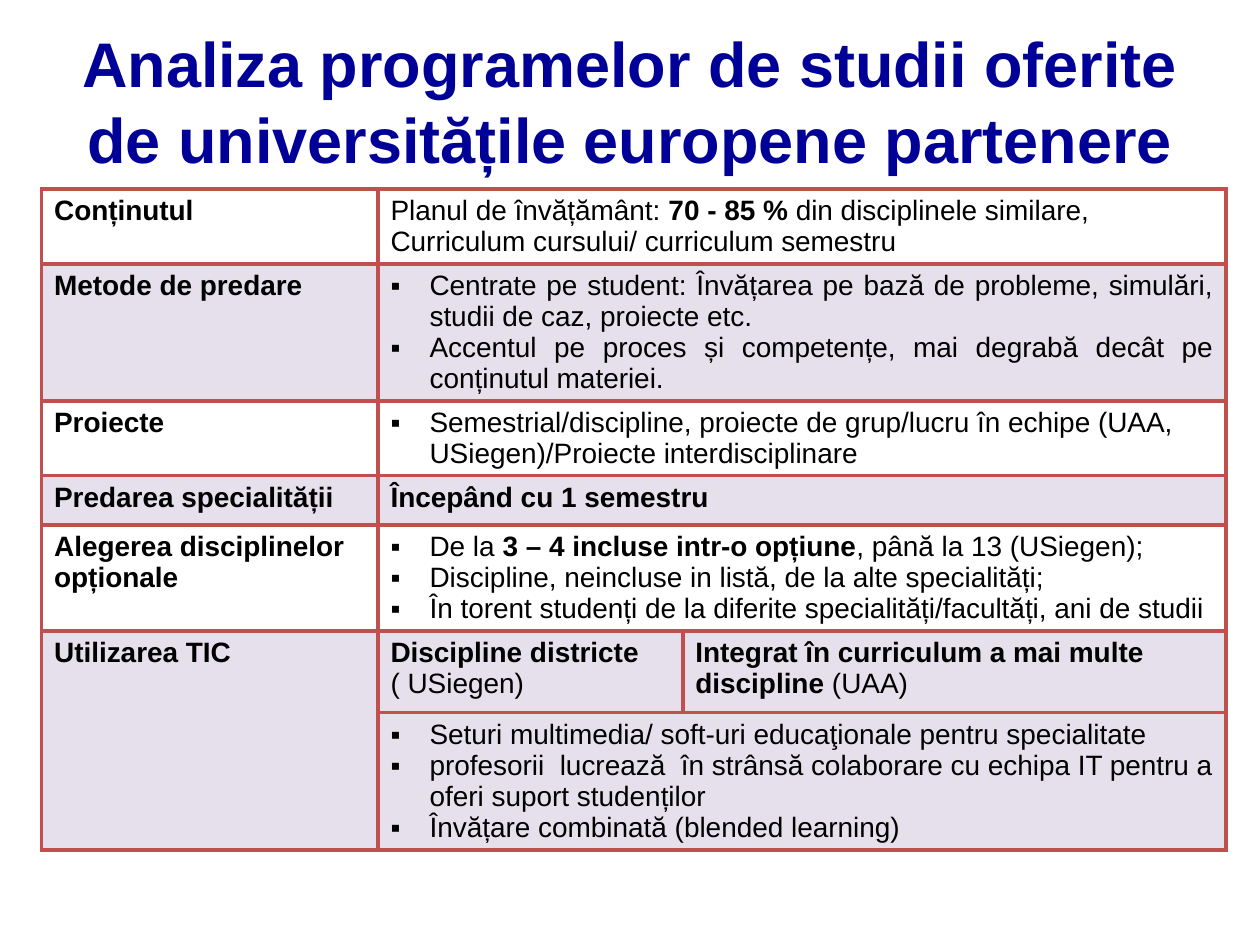
from lxml import etree
from pptx import Presentation
from pptx.dml.color import RGBColor
from pptx.enum.text import MSO_ANCHOR, PP_ALIGN
from pptx.oxml.ns import qn
from pptx.util import Inches, Pt

CENTER, JUSTIFY, LEFT = PP_ALIGN.CENTER, PP_ALIGN.JUSTIFY, PP_ALIGN.LEFT
MIDDLE = MSO_ANCHOR.MIDDLE
TITLE_ONLY = 5
COLORS = {"title": "000099", "text": "000000", "border": "C0504D",
          "band": "E6E0EC"}

TITLE = ("Analiza programelor de studii oferite "
         "de universitățile europene partenere")
COLUMN_WIDTHS = [2.67, 2.42, 4.31]
ROW_HEIGHTS = [0.41, 0.41, 0.41, 0.39, 0.39, 0.65, 0.65]
BANDED_ROWS = {1, 3, 5, 6}
LABELS = ["Conținutul", "Metode de predare", "Proiecte",
          "Predarea specialității", "Alegerea disciplinelor opționale",
          "Utilizarea TIC"]

# Each paragraph is a list of (text, bold) runs.
CONTENT = [[("Planul de învățământ: ", False), ("70 - 85 % ", True),
            ("din disciplinele similare, Curriculum cursului/ "
             "curriculum semestru", False)]]
METHODS = [[("Centrate pe student: Învățarea pe bază de probleme, simulări, "
             "studii de caz, proiecte etc.", False)],
           [("Accentul pe proces și competențe, mai degrabă decât pe "
             "conținutul materiei.", False)]]
PROJECTS = [[("Semestrial/discipline, proiecte de grup/lucru în echipe (UAA, "
              "USiegen)/Proiecte interdisciplinare", False)]]
SPECIALITY = [[("Începând cu 1 semestru", True)]]
OPTIONS = [[("De la ", False), ("3 – 4 incluse intr-o opțiune", True),
            (", până la 13 (USiegen);", False)],
           [("Discipline, neincluse in listă, de la alte specialități;", False)],
           [("În torent studenți de la diferite specialități/facultăți, "
             "ani de studii", False)]]
ICT_SEPARATE = [[("Discipline districte", True)], [("( USiegen)", False)]]
ICT_INTEGRATED = [[("Integrat în curriculum a mai multe discipline ", True),
                   ("(UAA)", False)]]
ICT_TOOLS = [[("Seturi multimedia/ soft-uri educaţionale pentru specialitate",
               False)],
             [("profesorii  lucrează  în strânsă colaborare cu echipa IT "
               "pentru a oferi suport studenților", False)],
             [("Învățare combinată (blended learning)", False)]]


class SlideBuilder:
    font = "Arial"
    title_size = 36
    body_size = 16
    border_width = 2.25
    indent = 0.31

    def __init__(self, slide):
        self.slide = slide

    def add_run(self, p, text, size, color, bold):
        r = p.add_run()
        r.text = text
        r.font.name = self.font
        r.font.size = Pt(size)
        r.font.bold = bold
        r.font.color.rgb = RGBColor.from_string(COLORS[color])

    def title(self, text, left, top, width, height):
        sp = self.slide.shapes.title
        sp.left, sp.top = Inches(left), Inches(top)
        sp.width, sp.height = Inches(width), Inches(height)
        tf = sp.text_frame
        tf.word_wrap = True
        tf.vertical_anchor = MIDDLE
        p = tf.paragraphs[0]
        p.alignment = CENTER
        self.add_run(p, text, self.title_size, "title", True)

    def table(self, left, top, widths, heights):
        frame = self.slide.shapes.add_table(
            len(heights), len(widths), Inches(left), Inches(top),
            Inches(sum(widths)), Inches(sum(heights)))
        table = frame.table
        table.first_row = table.horz_banding = False
        for column, width in zip(table.columns, widths):
            column.width = Inches(width)
        for i, (row, height) in enumerate(zip(table.rows, heights)):
            row.height = Inches(height)
            for cell in row.cells:
                self.borders(cell)
                if i in BANDED_ROWS:
                    cell.fill.solid()
                    cell.fill.fore_color.rgb = RGBColor.from_string(
                        COLORS["band"])
                else:
                    cell.fill.background()
        return table

    def borders(self, cell):
        tc_pr = cell._tc.get_or_add_tcPr()
        for side in ("lnL", "lnR", "lnT", "lnB"):
            ln = etree.SubElement(tc_pr, qn(f"a:{side}"),
                                  w=str(Pt(self.border_width)))
            fill = etree.SubElement(ln, qn("a:solidFill"))
            etree.SubElement(fill, qn("a:srgbClr"), val=COLORS["border"])

    def cell_text(self, cell, paragraphs, bulleted=False, align=LEFT):
        tf = cell.text_frame
        for i, runs in enumerate(paragraphs):
            p = tf.add_paragraph() if i else tf.paragraphs[0]
            p.alignment = align
            if bulleted:
                self.bullet(p)
            for text, bold in runs:
                self.add_run(p, text, self.body_size, "text", bold)

    def bullet(self, p):
        p_pr = p._p.get_or_add_pPr()
        p_pr.set("marL", str(Inches(self.indent)))
        p_pr.set("indent", str(-Inches(self.indent)))
        etree.SubElement(p_pr, qn("a:buFont"), typeface=self.font)
        etree.SubElement(p_pr, qn("a:buChar"), char="▪")


def main():
    prs = Presentation()
    prs.slide_width, prs.slide_height = Inches(10), Inches(7.5)
    s = SlideBuilder(prs.slides.add_slide(prs.slide_layouts[TITLE_ONLY]))
    s.title(TITLE, 0.5, 0.17, 9, 1.25)

    table = s.table(0.33, 1.5, COLUMN_WIDTHS, ROW_HEIGHTS)
    for row in (0, 1, 2, 3, 4, 6):
        table.cell(row, 1).merge(table.cell(row, 2))
    table.cell(5, 0).merge(table.cell(6, 0))

    for row, label in enumerate(LABELS):
        s.cell_text(table.cell(row, 0), [[(label, True)]])
    s.cell_text(table.cell(0, 1), CONTENT)
    s.cell_text(table.cell(1, 1), METHODS, bulleted=True, align=JUSTIFY)
    s.cell_text(table.cell(2, 1), PROJECTS, bulleted=True)
    s.cell_text(table.cell(3, 1), SPECIALITY)
    s.cell_text(table.cell(4, 1), OPTIONS, bulleted=True)
    s.cell_text(table.cell(5, 1), ICT_SEPARATE)
    s.cell_text(table.cell(5, 2), ICT_INTEGRATED)
    s.cell_text(table.cell(6, 1), ICT_TOOLS, bulleted=True)

    prs.save("out.pptx")


if __name__ == "__main__":
    main()
